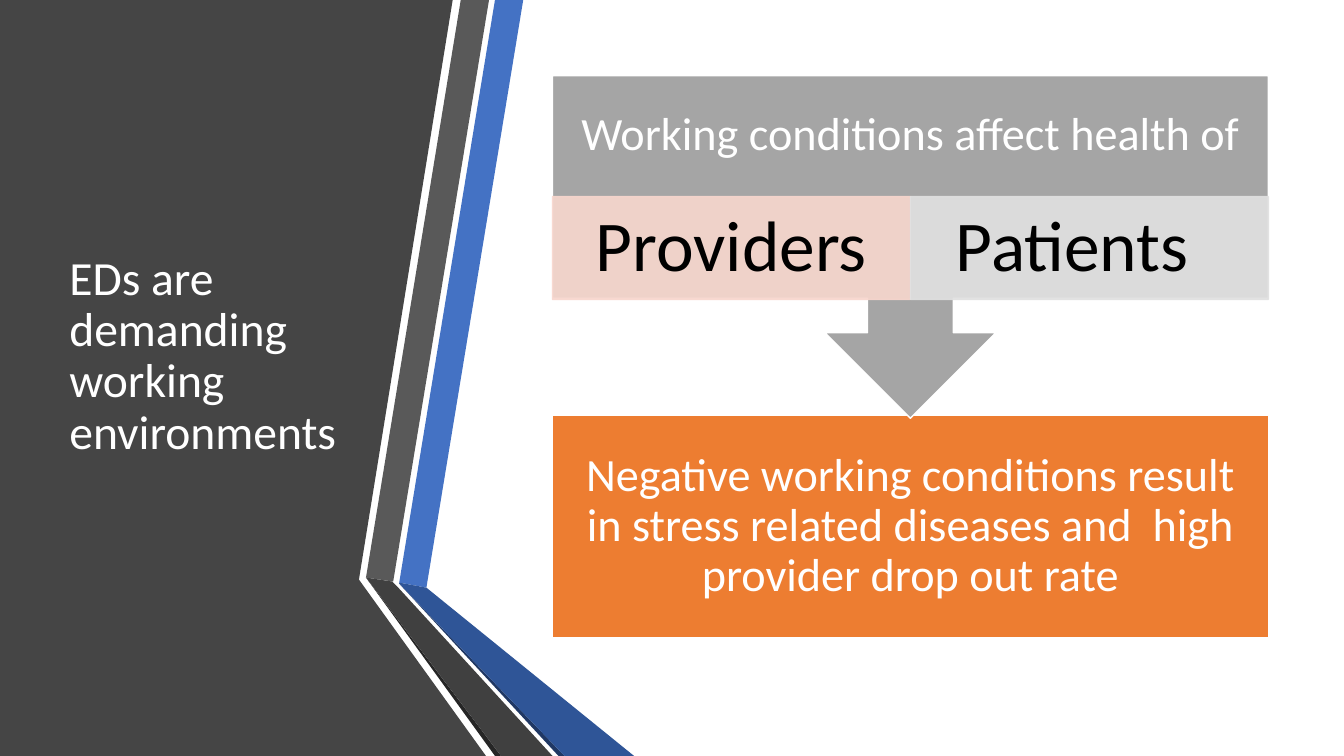
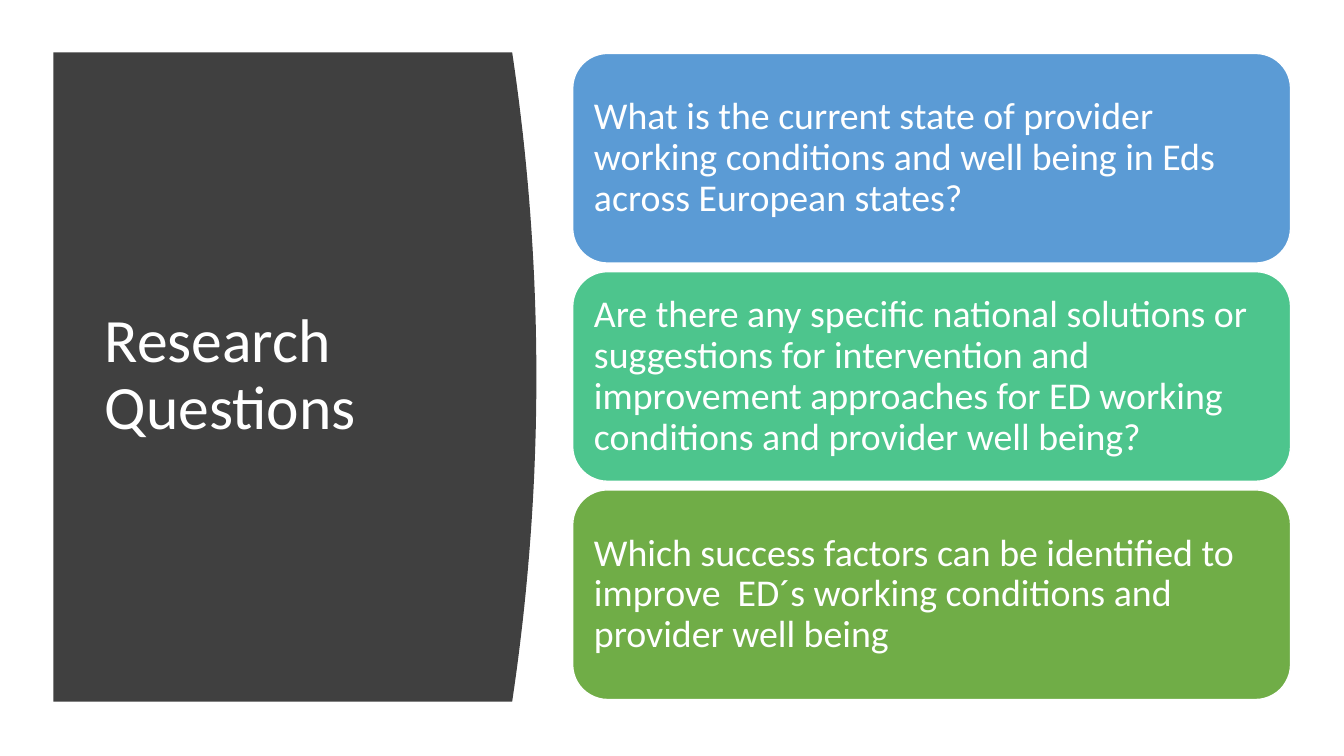
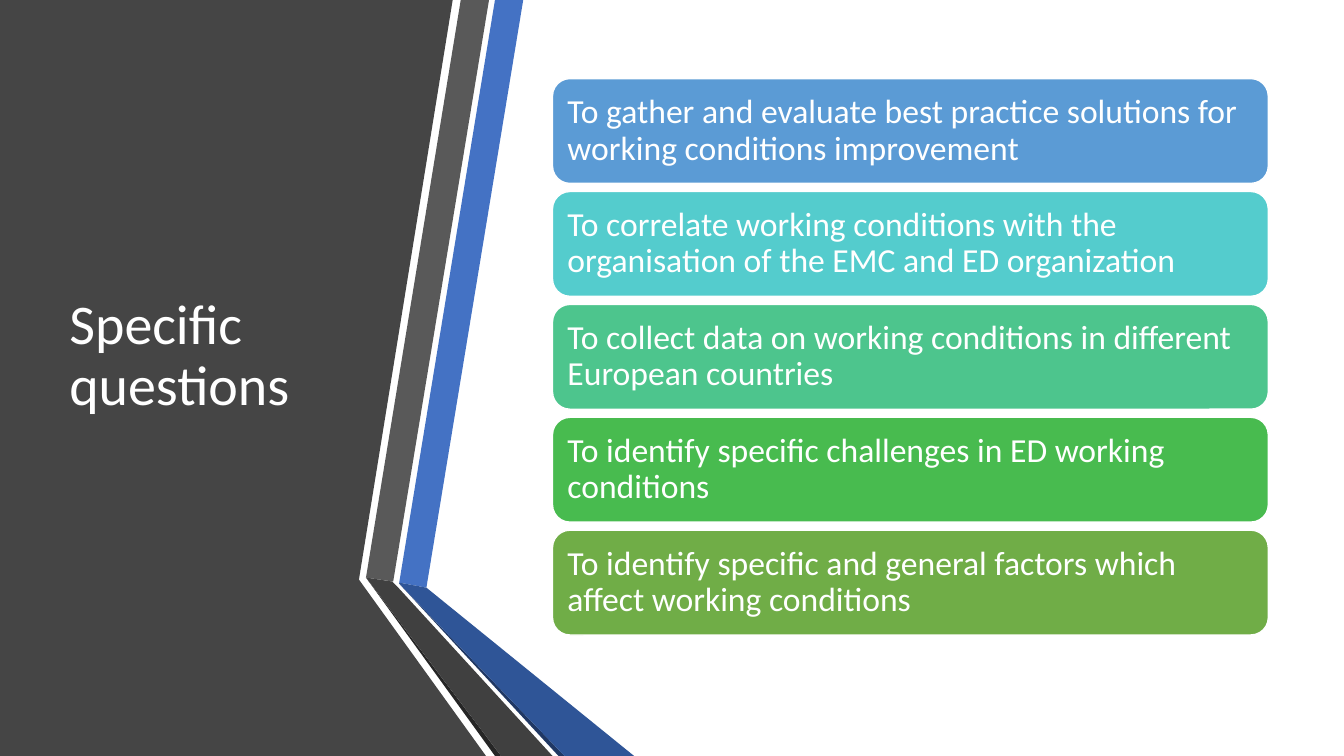
"""Three slides on working conditions in emergency departments."""
from lxml import etree
from pptx import Presentation
from pptx.dml.color import RGBColor
from pptx.enum import shapes, text
from pptx.oxml import ns
from pptx.util import Inches, Pt

WHITE = RGBColor(0xFF, 0xFF, 0xFF)
BLACK = RGBColor(0x00, 0x00, 0x00)
PANEL = RGBColor(0x45, 0x45, 0x45)
DARK = RGBColor(0x40, 0x40, 0x40)
SLATE = RGBColor(0x59, 0x59, 0x59)
SHADE = RGBColor(0x26, 0x26, 0x26)
COBALT = RGBColor(0x44, 0x72, 0xC4)
NAVY = RGBColor(0x20, 0x38, 0x64)
ROYAL = RGBColor(0x2F, 0x55, 0x97)
ORANGE = RGBColor(0xED, 0x7D, 0x31)
GREY = RGBColor(0xA5, 0xA5, 0xA5)
PINK = RGBColor(0xF8, 0xD7, 0xCE)
SILVER = RGBColor(0xE1, 0xE1, 0xE1)
BLUE = RGBColor(0x5B, 0x9B, 0xD5)
TEAL = RGBColor(0x54, 0xCC, 0xCD)
MINT = RGBColor(0x4D, 0xC5, 0x8D)
GREEN = RGBColor(0x48, 0xBB, 0x4F)
OLIVE = RGBColor(0x70, 0xAD, 0x47)

FONT = "Calibri"
KIND = shapes.MSO_SHAPE
ALIGN = text.PP_ALIGN

BANDS = [
    (PANEL, [(0, 0), (4.49, 0), (3.56, 5.75), (4.82, 7.5), (0, 7.5)]),
    (COBALT, [(3.96, 5.78), (4.23, 5.83), (5.19, 0), (4.91, 0)]),
    (SLATE, [(4.85, 0), (4.57, 0), (3.63, 5.73), (3.9, 5.77)]),
    (SHADE, [(3.63, 5.73), (4.91, 7.5), (4.97, 7.5)]),
    (NAVY, [(3.96, 5.79), (5.54, 7.5), (5.6, 7.5)]),
    (ROYAL, [(3.96, 5.79), (5.6, 7.5), (6.29, 7.5), (4.23, 5.83), (3.96, 5.78)]),
    (DARK, [(5.48, 7.5), (3.95, 5.83), (3.89, 5.77), (3.63, 5.73), (4.97, 7.5)]),
]
SIDE = (0.59, 0.75, 3.04, 5.58)

DEMAND = "EDs are demanding working environments"
CAUSE = "Working conditions affect health of"
EFFECT = ("Negative working conditions result in stress related diseases "
          "and  high provider drop out rate")
GROUPS = [("Providers", PINK, 0.4), ("Patients", SILVER, 0.74)]

RESEARCH = [
    ("What is the current state of provider working conditions and well being "
     "in Eds across European states?", BLUE),
    ("Are there any specific national solutions or suggestions for intervention and "
     "improvement approaches for ED working conditions and provider well being?", MINT),
    ("Which success factors can be identified to improve  ED´s working conditions "
     "and provider well being", OLIVE),
]
AIMS = [
    ("To gather and evaluate best practice solutions for working conditions "
     "improvement", BLUE),
    ("To correlate working conditions with the organisation of the EMC and ED "
     "organization", TEAL),
    ("To collect data on working conditions in different European countries", MINT),
    ("To identify specific challenges in ED working conditions", GREEN),
    ("To identify specific and general factors which affect working conditions", OLIVE),
]


def write(shape, words, size, color=WHITE, pads=(0.1, 0.05, 0.1, 0.05), align=ALIGN.LEFT):
    """Put one styled paragraph in the middle of a shape."""
    frame = shape.text_frame
    frame.word_wrap = True
    frame.vertical_anchor = text.MSO_ANCHOR.MIDDLE
    (frame.margin_left, frame.margin_top,
     frame.margin_right, frame.margin_bottom) = map(Inches, pads)
    frame.text = words
    para = frame.paragraphs[0]
    para.alignment = align
    para.line_spacing = 0.9
    font = para.runs[0].font
    font.name, font.size, font.color.rgb = FONT, Pt(size), color


def block(slide, kind, box, fill, edge=WHITE):
    """Add a filled preset shape with a thin edge."""
    shape = slide.shapes.add_shape(kind, *map(Inches, box))
    shape.shadow.inherit = False
    shape.fill.solid()
    shape.fill.fore_color.rgb = fill
    shape.line.color.rgb = edge
    shape.line.width = Pt(1)
    return shape


def fade(shape, share):
    """Make fill and edge partly transparent."""
    for color in shape._element.spPr.iter(ns.qn("a:srgbClr")):
        etree.SubElement(color, ns.qn("a:alpha")).set("val", str(share * 1000))


def outline(slide, points, fill):
    """Add a closed plain outline."""
    spots = [(Inches(x), Inches(y)) for x, y in points]
    pen = slide.shapes.build_freeform(*spots[0])
    pen.add_line_segments(spots[1:], close=True)
    shape = pen.convert_to_shape()
    shape.shadow.inherit = False
    shape.fill.solid()
    shape.fill.fore_color.rgb = fill
    shape.line.fill.background()


def title(slide, words, size, box=SIDE):
    """Add the white slide title."""
    write(slide.shapes.add_textbox(*map(Inches, box)), words, size)


def banded(slide, words, size):
    """Draw the folded side bands and the title on them."""
    for fill, points in BANDS:
        outline(slide, points, fill)
    title(slide, words, size)


def stack(slide, cards, box, high, size, pad):
    """Spread rounded cards evenly from top to bottom of a box."""
    left, top, wide, tall = box
    step = (tall - high) / (len(cards) - 1)
    for i, (words, fill) in enumerate(cards):
        card = block(slide, KIND.ROUNDED_RECTANGLE, (left, top + i * step, wide, high), fill)
        write(card, words, size, pads=(pad,) * 4)


def demands(slide):
    """Build the cause and effect slide."""
    banded(slide, DEMAND, 34)
    left, wide, pad = 5.48, 7.1, 0.26
    effect = block(slide, KIND.RECTANGLE, (left, 4.12, wide, 2.21), ORANGE)
    write(effect, EFFECT, 33, pads=(pad,) * 4, align=ALIGN.CENTER)
    cause = block(slide, KIND.DOWN_ARROW_CALLOUT, (left, 0.75, wide, 3.4), GREY)
    write(cause, CAUSE, 33, pads=(pad, pad, pad, 1.28), align=ALIGN.CENTER)
    half = wide / len(GROUPS)
    for i, (words, fill, right) in enumerate(GROUPS):
        cell = block(slide, KIND.RECTANGLE, (left + i * half, 1.95, half, 1.02), fill, fill)
        fade(cell, 90)
        write(cell, words, 51, BLACK, (0.4, 0.07, right, 0.07), ALIGN.CENTER)


def research(slide):
    """Build the research questions slide with its bowed panel."""
    left, top, edge, bow, low, steps = 0.53, 0.52, 5.08, 0.24, 6.96, 40
    turns = [2 * i / steps - 1 for i in range(steps + 1)]
    curve = [(edge + bow * (1 - t * t), (top + low + t * (low - top)) / 2) for t in turns]
    outline(slide, [(left, top), *curve, (left, low)], DARK)
    title(slide, "Research Questions", 44, (0.94, 1.11, 3.74, 5.24))
    stack(slide, RESEARCH, (5.68, 0.53, 7.12, 6.41), 2.08, 27, 0.11)


def aims(slide):
    """Build the specific questions slide."""
    banded(slide, "Specific questions", 40)
    stack(slide, AIMS, (5.48, 0.78, 7.1, 5.52), 1.04, 24, 0.1)


def main():
    """Build and save the deck."""
    deck = Presentation()
    deck.slide_width, deck.slide_height = Inches(13.33), Inches(7.5)
    for build in (demands, research, aims):
        build(deck.slides.add_slide(deck.slide_layouts[6]))
    deck.save("out.pptx")


if __name__ == "__main__":
    main()
